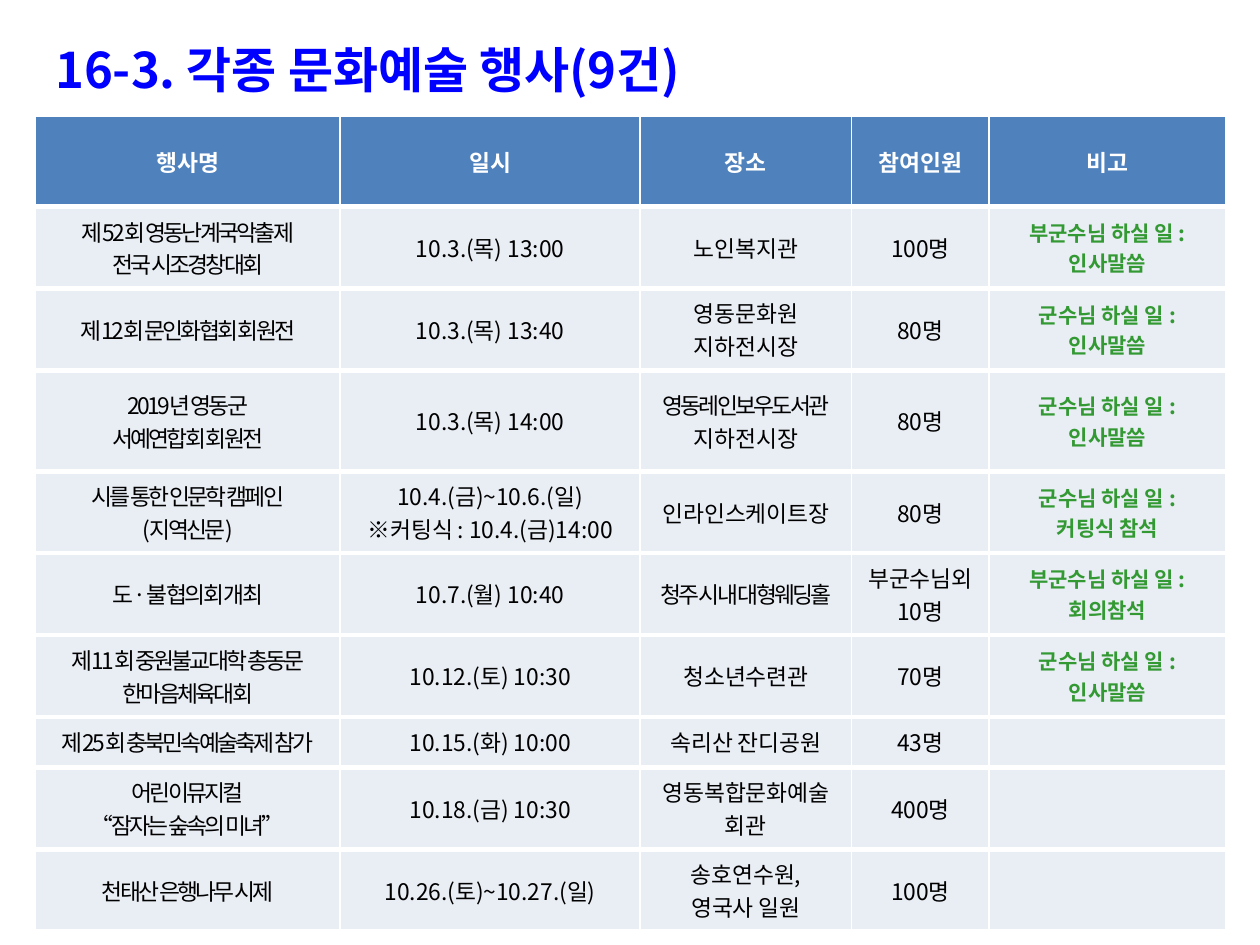
from lxml import etree
from pptx import Presentation, util as u
from pptx.dml.color import RGBColor
from pptx.enum import text
from pptx.oxml import ns

FONT = "Noto Sans CJK KR"
LEFT = 0.28
COLUMNS = [2.42, 2.38, 1.68, 1.09, 1.88]
ROWS = [0.72, 0.65, 0.65, 0.8, 0.65, 0.65, 0.65, 0.4, 0.65, 0.65]
HEADINGS = ["행사명", "일시", "장소", "참여인원", "비고"]
SPEECH = "인사말씀"
MAYOR = "군수님 하실 일 :"
DEPUTY = "부군수님 하실 일 :"
LIBRARY = "영동레인보우도서관"
HALL = "청주 시내 대형웨딩홀"
TIGHT_PLACES = (LIBRARY, HALL)

# Each cell is a list of paragraphs, each paragraph a list of runs.
EVENTS = [
    [[["제52회 영동난계국악출제"], ["전국 시조경창대회"]], [["10.3.(목) 13:00"]],
     [["노인복지관"]], [["100명"]], [[DEPUTY], [SPEECH]]],
    [[["제12회 문인화협회 회원전"]], [["10.3.(목) 13:40"]],
     [["영동문화원"], ["지하전시장"]], [["80명"]], [[MAYOR], [SPEECH]]],
    [[["2019년 영동군"], ["서예연합회 회원전"]], [["10.3.(목) 14:00"]],
     [[LIBRARY, "지하전시장"]], [["80명"]], [[MAYOR], [SPEECH]]],
    [[["시를 통한 인문학 캠페인"], ["(지역신문)"]],
     [["10.4.(금)~10.6.(일)"], ["※커팅식 : 10.4.(금)14:00"]],
     [["인라인스케이트장"]], [["80명"]], [[MAYOR], ["커팅식 참석"]]],
    [[["도·불 협의회 개최"]], [["10.7.(월) 10:40"]],
     [[HALL]], [["부군수님외 10명"]], [[DEPUTY], ["회의참석"]]],
    [[["제11회 중원불교대학 총동문"], ["한마음체육대회"]], [["10.12.(토) 10:30"]],
     [["청소년수련관"]], [["70명"]], [[MAYOR], [SPEECH]]],
    [[["제25회 충북민속예술축제 참가"]], [["10.15.(화) 10:00"]],
     [["속리산 잔디공원"]], [["43명"]], []],
    [[["어린이뮤지컬"], ["“잠자는 숲속의 미녀”"]], [["10.18.(금) 10:30"]],
     [["영동복합문화예술회관"]], [["400명"]], []],
    [[["천태산 은행나무 시제"]], [["10.26.(토)~10.27.(일)"]],
     [["송호연수원,"], ["영국사 일원"]], [["100명"]], []],
]


def colour(code):
    """Turn a hex string into a colour."""
    return RGBColor.from_string(code)


def add_span(para, words, size, code, bold=False, spacing=0):
    """Add one formatted run to a paragraph."""
    span = para.add_run()
    span.text = words
    span.font.size = u.Pt(size)
    span.font.bold = bold
    span.font.name = FONT
    span.font.color.rgb = colour(code)
    props = span.font._element
    etree.SubElement(props, ns.qn("a:ea")).set("typeface", FONT)
    if spacing:
        props.set("spc", str(round(spacing * 100)))


def add_title(page):
    """Place the blue heading above the table."""
    box = page.shapes.add_textbox(
        u.Inches(LEFT), u.Inches(0.03), u.Inches(8.19), u.Inches(0.81))
    frame = box.text_frame
    frame.word_wrap = True
    frame.auto_size = text.MSO_AUTO_SIZE.SHAPE_TO_FIT_TEXT
    para = frame.paragraphs[0]
    para.line_spacing = 1.5
    props = para._p.get_or_add_pPr()
    props.set("marL", str(u.Inches(0.56)))
    props.set("indent", str(u.Inches(-0.5)))
    add_span(para, "16-3. 각종 문화예술 행사(9건)", 28, "0000FF", True)


def style_cell(cell, fill, top):
    """Give a cell its white borders, fill and middle anchor."""
    props = cell._tc.get_or_add_tcPr()
    for side, points in (("L", 1), ("R", 1), ("T", top), ("B", 3)):
        line = etree.SubElement(props, ns.qn(f"a:ln{side}"), w=str(u.Pt(points)))
        solid = etree.SubElement(line, ns.qn("a:solidFill"))
        etree.SubElement(solid, ns.qn("a:srgbClr"), val="FFFFFF")
    cell.fill.solid()
    cell.fill.fore_color.rgb = colour(fill)
    cell.vertical_anchor = text.MSO_ANCHOR.MIDDLE


def fill_cell(cell, paragraphs, size, code, bold=False, tight=False):
    """Write centred paragraphs into a cell, run by run."""
    frame = cell.text_frame
    for index, runs in enumerate(paragraphs):
        para = frame.add_paragraph() if index else frame.paragraphs[0]
        para.alignment = text.PP_ALIGN.CENTER
        for words in runs:
            narrow = tight or words in TIGHT_PLACES
            add_span(para, words, size, code, bold, -1.5 if narrow else 0)
    if not paragraphs:
        end = etree.SubElement(frame.paragraphs[0]._p, ns.qn("a:endParaRPr"))
        end.set("sz", str(size * 100))


def add_events_table(page):
    """Build the grid of events under its heading row."""
    table = page.shapes.add_table(
        len(ROWS), len(COLUMNS), u.Inches(LEFT), u.Inches(0.92),
        u.Inches(sum(COLUMNS)), u.Inches(sum(ROWS))).table
    for column, width in zip(table.columns, COLUMNS):
        column.width = u.Inches(width)
    for row, height in zip(table.rows, ROWS):
        row.height = u.Inches(height)
    for number, heading in enumerate(HEADINGS):
        cell = table.cell(0, number)
        style_cell(cell, "4F81BD", 1)
        fill_cell(cell, [[heading]], 13, "FFFFFF", True)
    for row, event in enumerate(EVENTS, 1):
        for column, paragraphs in enumerate(event):
            cell = table.cell(row, column)
            style_cell(cell, "E9EDF4", 3)
            if column == len(COLUMNS) - 1:
                fill_cell(cell, paragraphs, 12, "339933", True)
            else:
                fill_cell(cell, paragraphs, 13, "000000", tight=column == 0)


def main():
    """Create the slide and save the deck."""
    deck = Presentation()
    deck.slide_width, deck.slide_height = u.Inches(10), u.Inches(7.5)
    page = deck.slides.add_slide(deck.slide_layouts[6])
    add_title(page)
    add_events_table(page)
    deck.save("out.pptx")


if __name__ == "__main__":
    main()
